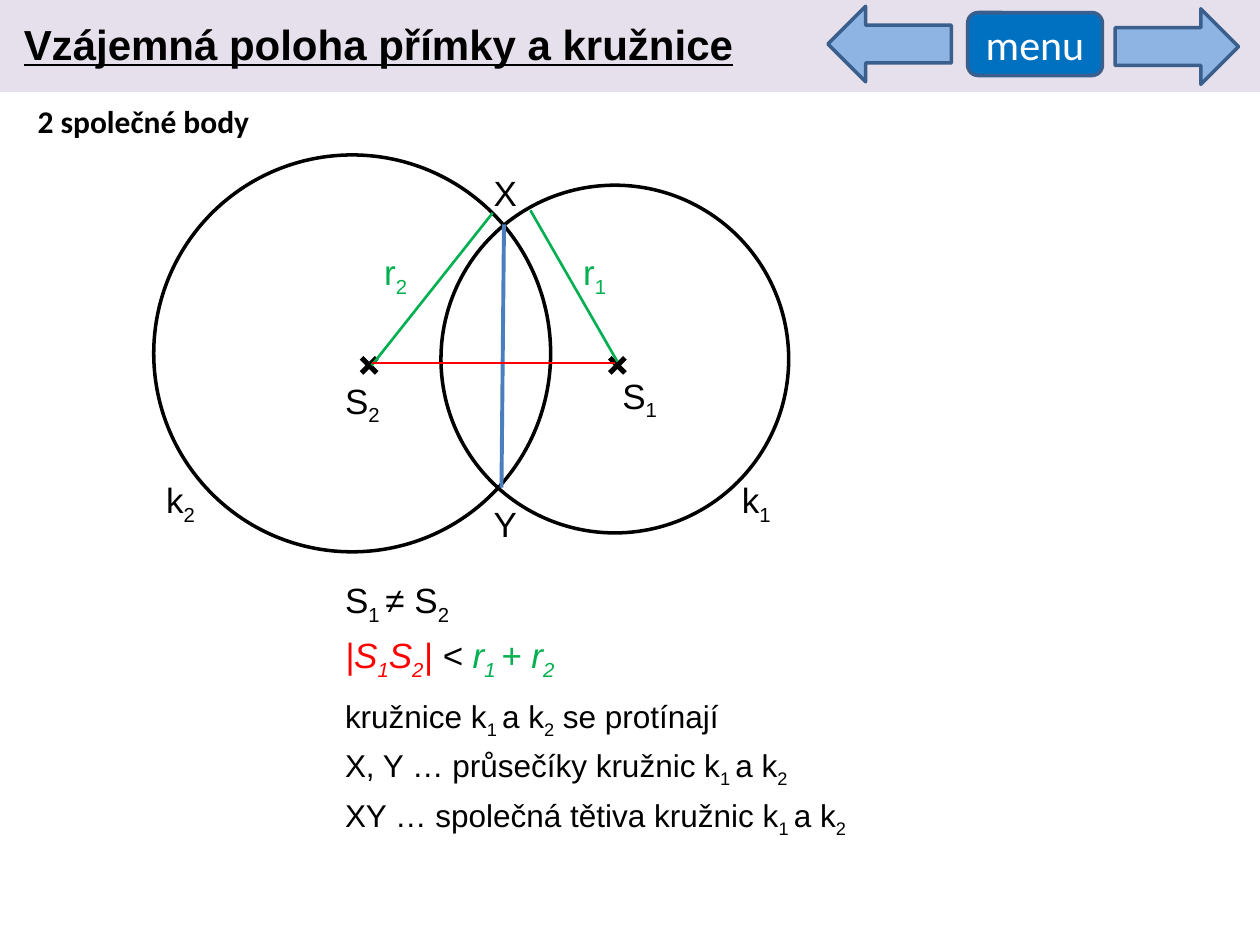
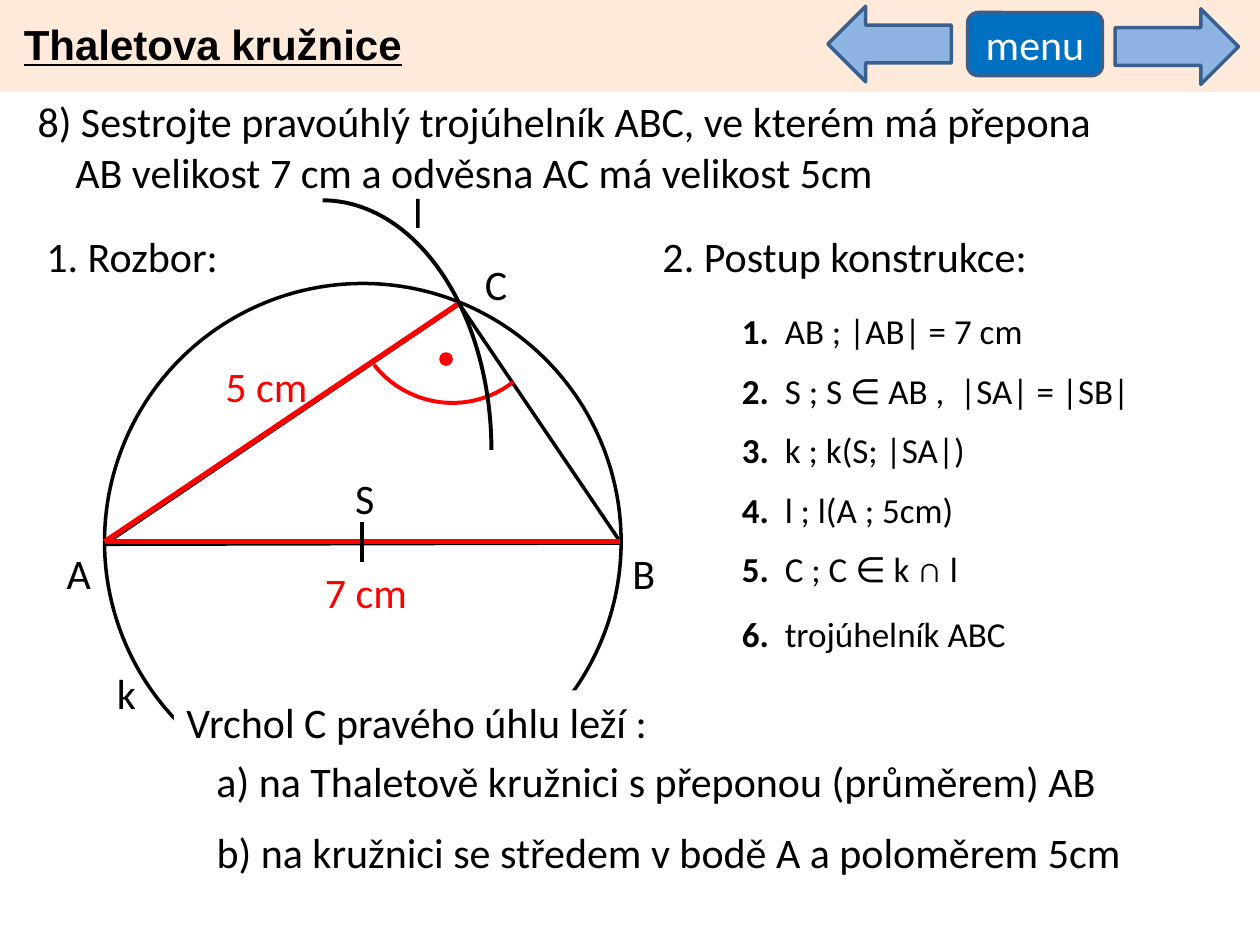
"""Builds two geometry slides: intersecting circles and Thales' circle."""
from dataclasses import dataclass

from lxml import etree
from pptx import Presentation
from pptx import util as u
from pptx.dml.color import RGBColor
from pptx.enum import shapes, text
from pptx.oxml.ns import qn

SHAPE = shapes.MSO_SHAPE


@dataclass(frozen=True)
class Theme:
    """Shared colours, fonts, type sizes and line widths."""
    black: str = "000000"
    white: str = "FFFFFF"
    red: str = "FF0000"
    green: str = "00B050"
    chord: str = "4B7EBC"
    arrow: str = "8EB4E3"
    button: str = "0070C0"
    button_edge: str = "3A5F8C"
    lilac: str = "E6E0EC"
    peach: str = "FDEADA"
    sans: str = "Arial"
    body: str = "Calibri"
    large: int = 24
    medium: int = 20
    small: int = 18
    thin: float = 1.5
    outline: float = 2
    arc: float = 2.25
    thick: float = 3


T = Theme()


def style_run(r, size, font, color, bold=False, italic=False, underline=False):
    """Format one run."""
    f = r.font
    f.size, f.name = u.Pt(size), font
    f.bold, f.italic, f.underline = bold, italic, underline
    f.color.rgb = RGBColor.from_string(color)


def indent(p, left, first=0):
    """Set the left margin and first-line indent of a paragraph."""
    pPr = p._p.get_or_add_pPr()
    pPr.set("marL", str(u.Inches(left)))
    pPr.set("indent", str(u.Inches(first)))


def add_box(s, x, y, w, size, lines=1):
    """Add an empty wrapping text box as high as its lines."""
    h = round(0.1 + lines * size * 1.2 / 72, 2)
    sp = s.shapes.add_textbox(*map(u.Inches, (x, y, w, h)))
    tf = sp.text_frame
    tf.word_wrap = True
    tf.auto_size = text.MSO_AUTO_SIZE.SHAPE_TO_FIT_TEXT
    return tf


def add_text(s, words, x, y, w, size=T.large, font=T.body, color=T.black, **look):
    """Add a text box, one paragraph for each line of words."""
    tf = add_box(s, x, y, w, size, words.count("\n") + 1)
    tf.text = words
    for p in tf.paragraphs:
        for r in p.runs:
            style_run(r, size, font, color, **look)
    return tf


def add_formula(s, parts, x, y, w, size=T.medium, italic=False):
    """Add coloured parts in which every second piece between ~ is a subscript."""
    tf = add_box(s, x, y, w, size)
    p = tf.paragraphs[0]
    for words, color in parts:
        for i, piece in enumerate(words.split("~")):
            if piece:
                r = p.add_run()
                r.text = piece
                style_run(r, size, T.sans, color, italic=italic)
                if i % 2:
                    r.font._element.set("baseline", "-25000")


def add_step(s, number, words, y):
    """Add one numbered step of the construction."""
    tf = add_box(s, 5.79, y, 3.7, T.medium)
    p = tf.paragraphs[0]
    indent(p, 0.34, -0.34)
    for words_part, bold in ((f"{number}.", True), ("\t" + words, False)):
        r = p.add_run()
        r.text = words_part
        style_run(r, T.medium, T.body, T.black, bold=bold)


def add_figure(s, kind, x, y, w, h, fill=None, line=None, width=T.outline, rotation=0):
    """Add a preset shape with optional fill and outline."""
    sp = s.shapes.add_shape(kind, *map(u.Inches, (x, y, w, h)))
    sp.shadow.inherit = False
    sp.rotation = rotation
    if fill:
        sp.fill.solid()
        sp.fill.fore_color.rgb = RGBColor.from_string(fill)
    else:
        sp.fill.background()
    if line:
        sp.line.color.rgb = RGBColor.from_string(line)
        sp.line.width = u.Pt(width)
    else:
        sp.line.fill.background()
    return sp


def add_label(s, kind, words, x, y, w, h, fill, line=None, color=T.black,
              align=text.PP_ALIGN.LEFT, anchor=text.MSO_ANCHOR.TOP):
    """Add a filled shape that carries one line of text."""
    tf = add_figure(s, kind, x, y, w, h, fill, line).text_frame
    tf.word_wrap, tf.vertical_anchor = True, anchor
    tf.text = words
    p = tf.paragraphs[0]
    p.alignment = align
    style_run(p.runs[0], T.large, T.body, color)


def add_line(s, x1, y1, x2, y2, color, width):
    """Add a straight line without shadow."""
    c = s.shapes.add_connector(shapes.MSO_CONNECTOR.STRAIGHT,
                               *map(u.Inches, (x1, y1, x2, y2)))
    c.line.color.rgb = RGBColor.from_string(color)
    c.line.width = u.Pt(width)
    etree.SubElement(c._element.spPr, qn("a:effectLst"))


def add_cross(s, x, y, arm=0.06):
    """Mark a centre with a small cross."""
    for d in (arm, -arm):
        add_line(s, x - arm, y - d, x + arm, y + d, T.black, T.thick)


def add_header(s, title, band):
    """Add the title band with its navigation buttons."""
    add_figure(s, SHAPE.RECTANGLE, 0, 0, 10, 0.73, band)
    for kind, x, y in ((SHAPE.RIGHT_ARROW, 8.85, 0.07), (SHAPE.LEFT_ARROW, 6.57, 0.05)):
        add_figure(s, kind, x, y, 0.98, 0.6, T.arrow, T.button_edge)
    add_text(s, title, 0.09, 0.1, 9.32, font=T.sans, bold=True, underline=True)
    add_label(s, SHAPE.ROUNDED_RECTANGLE, "menu", 7.68, 0.1, 1.07, 0.5, T.button,
              T.button_edge, T.white, text.PP_ALIGN.CENTER, text.MSO_ANCHOR.MIDDLE)


def build_circles(s):
    """Draw two circles that meet in two points."""
    add_text(s, "2 společné body", 0.2, 0.76, 3.86, T.small, bold=True)
    for x, y, d in ((3.5, 1.47, 2.76), (1.22, 1.23, 3.15)):
        add_figure(s, SHAPE.OVAL, x, y, d, d, line=T.black)
    for x in (4.9, 2.93):
        add_cross(s, x, 2.9)
    for line in ((4.21, 1.67, 4.9, 2.87, T.green, T.thin),
                 (2.95, 2.9, 3.91, 1.69, T.green, T.thin),
                 (4, 1.78, 3.98, 3.87, T.chord, T.arc),
                 (2.95, 2.88, 4.88, 2.88, T.red, T.thin)):
        add_line(s, *line)
    for words, x, y, w, color in (("S~1", 4.84, 2.92, 1.02, T.black),
                                  ("S~2", 2.64, 2.96, 1.02, T.black),
                                  ("k~1", 5.79, 3.75, 0.71, T.black),
                                  ("k~2", 1.22, 3.75, 0.71, T.black),
                                  ("r~1", 4.53, 1.94, 0.55, T.green),
                                  ("r~2", 2.95, 1.94, 0.55, T.green),
                                  ("X", 3.82, 1.31, 0.47, T.black),
                                  ("Y", 3.82, 3.94, 0.47, T.black),
                                  ("S~1 ~≠ S~2", 2.64, 4.54, 1.26, T.black)):
        add_formula(s, [(words, color)], x, y, w)
    add_formula(s, [("|S~1~S~2~| ", T.red), ("< ", T.black), ("r~1 ~+ r~2", T.green)],
                2.64, 4.98, 2.2, italic=True)
    for i, words in enumerate(("kružnice k~1 ~a k~2~ se protínají",
                               "X, Y … průsečíky kružnic k~1 ~a k~2",
                               "XY … společná tětiva kružnic k~1 ~a k~2")):
        add_formula(s, [(words, T.black)], 2.64, 5.48 + i * 0.395, 4.33, T.small)
    add_header(s, "Vzájemná poloha přímky a kružnice", T.lilac)


def build_thales(s):
    """Draw the construction of a right triangle on Thales' circle."""
    task = add_text(s, "8) Sestrojte pravoúhlý trojúhelník ABC, ve kterém má přepona\n"
                    "AB velikost 7 cm a odvěsna AC má velikost 5cm", 0.2, 0.71, 9.37)
    indent(task.paragraphs[1], 0.3)
    add_figure(s, SHAPE.RIGHT_TRIANGLE, 1.18, 3.17, 3.4, 2.29, line=T.black, rotation=145.9)
    add_figure(s, SHAPE.OVAL, 0.83, 2.25, 4.1, 4.1, line=T.black)
    add_line(s, 0.83, 4.3, 4.92, 4.3, T.red, T.thick)
    add_line(s, 2.87, 4.14, 2.87, 4.46, T.black, T.arc)
    add_figure(s, SHAPE.ARC, 2.8, 1.62, 1.57, 1.58, line=T.red, width=T.arc, rotation=141.8)
    add_figure(s, SHAPE.OVAL, 3.5, 2.81, 0.08, 0.08, T.red, T.red)
    add_line(s, 0.83, 4.3, 3.64, 2.41, T.red, T.thick)
    for words, x, y, w, color in (("1. Rozbor:", 0.27, 1.78, 1.73, T.black),
                                  ("2. Postup konstrukce:", 5.16, 1.78, 3.47, T.black),
                                  ("A", 0.43, 4.3, 0.63, T.black),
                                  ("B", 4.92, 4.3, 0.63, T.black),
                                  ("C", 3.75, 2, 0.63, T.black),
                                  ("S", 2.72, 3.7, 0.63, T.black),
                                  ("k", 0.83, 5.25, 0.63, T.black),
                                  ("l", 3.18, 1.43, 0.56, T.black),
                                  ("7 cm", 2.48, 4.45, 1.02, T.red),
                                  ("5 cm", 1.69, 2.81, 1.02, T.red)):
        add_text(s, words, x, y, w, color=color)
    steps = ("AB ; |AB| = 7 cm", "S ; S ∈ AB ,  |SA| = |SB|", "k ; k(S; |SA|)",
             "l ; l(A ; 5cm)", "C ; C ∈ k ∩ l")
    for i, words in enumerate(steps):
        add_step(s, i + 1, words, 2.41 + i * 0.4725)
    add_step(s, 6, "trojúhelník ABC", 4.81)
    for words, x, y, w in (
            ("Vrchol C pravého úhlu leží :", 1.38, 5.48, 5.51),
            ("a) na Thaletově kružnici s přeponou (průměrem) AB", 1.62, 5.95, 7.36),
            ("b) na kružnici se středem v bodě A a poloměrem 5cm", 1.62, 6.51, 7.52)):
        add_label(s, SHAPE.RECTANGLE, words, x, y, w, 0.51, T.white)
    add_figure(s, SHAPE.ARC, 1.22, 1.59, 2.68, 3.96, line=T.black, width=T.arc)
    add_header(s, "Thaletova kružnice", T.peach)


def main():
    """Build and save the presentation."""
    prs = Presentation()
    prs.slide_width, prs.slide_height = u.Inches(10), u.Inches(7.5)
    for build in (build_circles, build_thales):
        build(prs.slides.add_slide(prs.slide_layouts[6]))
    prs.save("out.pptx")


if __name__ == "__main__":
    main()
